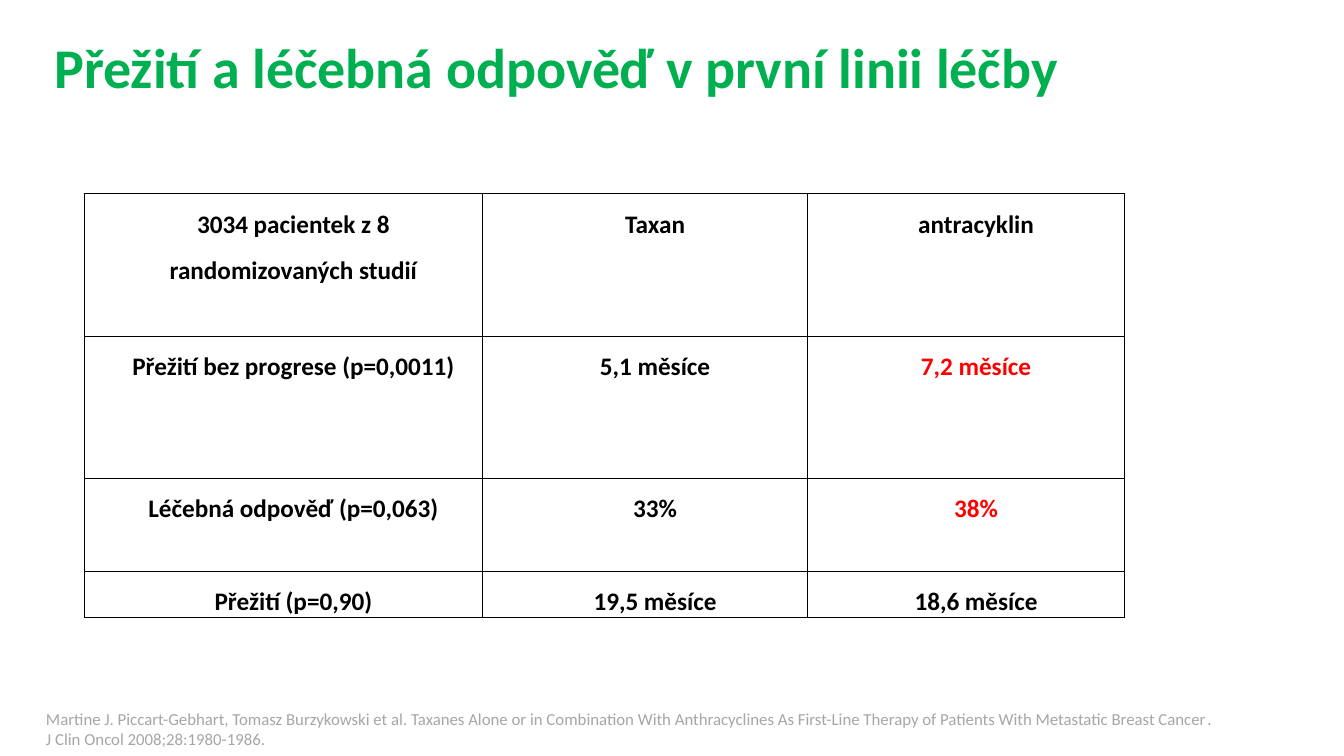
from lxml import etree
from pptx import Presentation
from pptx.dml.color import RGBColor as Rgb
from pptx.enum.text import MSO_ANCHOR as Anchor, PP_ALIGN as Align
from pptx.oxml.ns import qn
from pptx.util import Cm, Pt

# Content
COLORS = {"green": "00B050", "black": "000000", "red": "FF0000", "gray": "A6A6A6"}
FONT = "Calibri"
TITLE = "Přežití a léčebná odpověď v první linii léčby"
RESULTS = [
    ("3034 pacientek z 8 randomizovaných studií", "Taxan", "antracyklin"),
    ("Přežití bez progrese (p=0,0011)", "5,1 měsíce", "7,2 měsíce"),
    ("Léčebná odpověď (p=0,063)", "33%", "38%"),
    ("Přežití (p=0,90)", "19,5 měsíce", "18,6 měsíce"),
]
HIGHLIGHTS = {"7,2 měsíce", "38%"}
STUDY = (
    "Martine J. Piccart-Gebhart, Tomasz Burzykowski et al. Taxanes Alone or in "
    "Combination With Anthracyclines As First-Line Therapy of Patients With "
    "Metastatic Breast Cancer"
)
JOURNAL = "J Clin Oncol 2008;28:1980-1986."

# Sizes in centimetres
COLUMN_WIDTHS = [10.03, 8.2, 7.98]
ROW_HEIGHTS = [3.6, 3.58, 2.34, 1.16]


def write(para, text, size, color, bold=False, italic=False):
    span = para.add_run()
    span.text = text
    span.font.name = FONT
    span.font.size = Pt(size)
    span.font.bold = bold
    span.font.italic = italic
    span.font.color.rgb = Rgb.from_string(COLORS[color])


def add_box(page, left, top, width, height, anchor):
    box = page.shapes.add_textbox(Cm(left), Cm(top), Cm(width), Cm(height))
    box.text_frame.word_wrap = True
    box.text_frame.vertical_anchor = anchor
    return box.text_frame.paragraphs[0]


def add_borders(cell):
    properties = cell._tc.get_or_add_tcPr()
    for side in ("a:lnL", "a:lnR", "a:lnT", "a:lnB"):
        line = etree.SubElement(properties, qn(side), w=str(Pt(1)))
        fill = etree.SubElement(line, qn("a:solidFill"))
        etree.SubElement(fill, qn("a:srgbClr"), val=COLORS["black"])


def fill_cell(cell, text):
    add_borders(cell)
    cell.fill.background()
    cell.margin_left = cell.margin_right = Cm(0.18)
    cell.margin_top = cell.margin_bottom = 0
    para = cell.text_frame.paragraphs[0]
    para.alignment = Align.CENTER
    para.line_spacing = 1.5
    indent = para._p.get_or_add_pPr()
    indent.set("marL", str(Cm(0.5)))
    indent.set("indent", "0")
    write(para, text, 18, "red" if text in HIGHLIGHTS else "black", bold=True)


def add_results(page):
    frame = page.shapes.add_table(
        len(RESULTS), len(COLUMN_WIDTHS), Cm(2.13), Cm(4.88),
        Cm(sum(COLUMN_WIDTHS)), Cm(sum(ROW_HEIGHTS)))
    table = frame.table
    table.first_row = table.horz_banding = False
    for column, width in zip(table.columns, COLUMN_WIDTHS):
        column.width = Cm(width)
    for row, height, texts in zip(table.rows, ROW_HEIGHTS, RESULTS):
        row.height = Cm(height)
        for cell, text in zip(row.cells, texts):
            fill_cell(cell, text)


def main():
    deck = Presentation()
    deck.slide_width, deck.slide_height = Cm(33.87), Cm(19.05)
    page = deck.slides.add_slide(deck.slide_layouts[6])

    # Title
    heading = add_box(page, 1.12, 0.71, 31.6, 2.11, Anchor.MIDDLE)
    heading.line_spacing = 0.9
    write(heading, TITLE, 40, "green", bold=True)

    # Results table
    add_results(page)

    # Citation
    citation = add_box(page, 0.91, 17.73, 32, 1.8, Anchor.TOP)
    write(citation, STUDY, 12, "gray")
    write(citation, ". ", 12, "gray", italic=True)
    citation.add_line_break()
    write(citation, JOURNAL, 12, "gray")

    deck.save("out.pptx")


if __name__ == "__main__":
    main()
